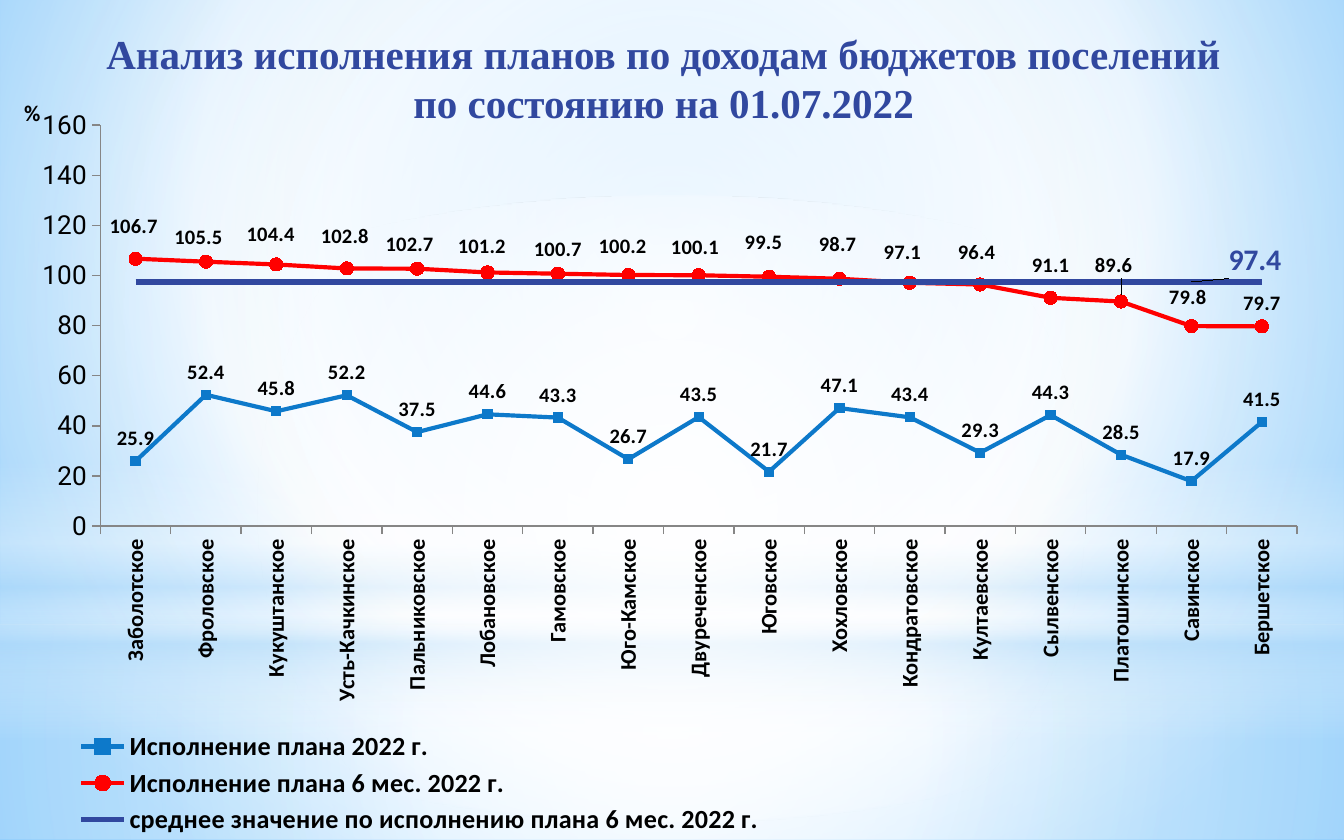
from pptx import Presentation
from pptx import util as u
from pptx.chart.data import CategoryChartData
from pptx.dml.color import RGBColor
from pptx.enum import chart as ch, shapes, text
from pptx.oxml import parse_xml
from pptx.oxml.ns import nsdecls, qn

Pt = u.Pt

# Content
TITLE = ["Анализ исполнения планов по доходам бюджетов поселений",
         "по состоянию на 01.07.2022"]
SETTLEMENTS = [
    "Заболотское", "Фроловское", "Кукуштанское", "Усть-Качкинское", "Пальниковское",
    "Лобановское", "Гамовское", "Юго-Камское", "Двуреченское", "Юговское", "Хохловское",
    "Кондратовское", "Култаевское", "Сылвенское", "Платошинское", "Савинское", "Бершетское"]
YEAR_PLAN = [25.9, 52.4, 45.8, 52.2, 37.5, 44.6, 43.3, 26.7, 43.5,
             21.7, 47.1, 43.4, 29.3, 44.3, 28.5, 17.9, 41.5]
HALF_PLAN = [106.7, 105.5, 104.4, 102.8, 102.7, 101.2, 100.7, 100.2, 100.1,
             99.5, 98.7, 97.1, 96.4, 91.1, 89.6, 79.8, 79.7]
SERIES = [
    ("Исполнение плана 2022 г.", YEAR_PLAN),
    ("Исполнение плана 6 мес. 2022 г.", HALF_PLAN),
    ("среднее значение по исполнению плана 6 мес. 2022 г.", [97.4] * len(SETTLEMENTS))]
# Shifts of the half-year labels from their usual place, in points (x, y)
HALF_SHIFTS = {
    0: (-1, -4), 1: (-4, 0), 2: (-3, -3), 3: (-1, -4), 4: (-4, 0), 5: (-3, -1),
    7: (-3, -2), 8: (-2, -2), 9: (-3, -5), 10: (-1, -5), 11: (-4, -3), 12: (-2, -4),
    13: (0, -4), 14: (-4, -6), 15: (-2, -2), 16: (0, 1)}
MEAN_POINT, MEAN_SHIFT = 15, (34, 1)

THEME = dict(
    year="0D79CA", half="FF0000", mean="31489F", title="31489F", ink="000000", axis="868686",
    title_font="Times New Roman", label_font="Calibri", chart_font="Roboto",
    title_size=22, legend_size=14, value_size=14, category_size=12, label_size=11, mean_size=16)

# Gradients: stops are (position, colour, opacity); a focus makes them radial
CENTRE = (50, 50, 50, 50)
BACKGROUND = ([(0, "9ED5FF", 100), (60, "FFFFFF", 100), (100, "5BB9FF", 100)], (20, 10, 20, 60))
RECT, OVAL = shapes.MSO_SHAPE.RECTANGLE, shapes.MSO_SHAPE.OVAL
GLOWS = [  # shape, top, height, stops, focus
    (RECT, 334.8, 115.2, [(0, "FFFFFF", 91), (37, "FFFFFF", 76), (100, "B4DCFA", 79)], CENTRE),
    (RECT, 0, 334.8, [(0, "FFFFFF", 89), (48, "FFFFFF", 62), (100, "B4DCFA", 79)], CENTRE),
    (RECT, 247, 149.8, [(0, "FFFFFF", 0), (29, "FFFFFF", 30), (45, "B4DCFA", 40),
                        (55, "FFFFFF", 26), (65, "B4DCFA", 60), (100, "FFFFFF", 0)], None),
    (OVAL, 105.1, 334.8, [(0, "FFFFFF", 100), (56, "FFFFFF", 0)], CENTRE)]

SLIDE_W, SLIDE_H = 720, 450
CHART_BOX = (2.9, 43.9, 717.1, 406.1)


def rgb(role):
    return RGBColor.from_string(THEME[role])


def style(font, size, color="ink", face="label_font", bold=True):
    font.size, font.bold, font.name = Pt(size), bold, THEME[face]
    font.color.rgb = rgb(color)


def set_gradient(fill, owner, stops, focus):
    fill.gradient()
    grad = next(owner.iter(qn("a:gradFill")))
    grad.clear()
    marks = "".join(
        f'<a:gs pos="{pos * 1000}"><a:srgbClr val="{color}">'
        f'<a:alpha val="{alpha * 1000}"/></a:srgbClr></a:gs>' for pos, color, alpha in stops)
    grad.append(parse_xml(f'<a:gsLst {nsdecls("a")}>{marks}</a:gsLst>'))
    if focus:
        edges = " ".join(f'{side}="{v * 1000}"' for side, v in zip("ltrb", focus))
        grad.append(parse_xml(f'<a:path {nsdecls("a")} path="circle">'
                              f'<a:fillToRect {edges}/></a:path>'))
    else:
        grad.append(parse_xml(f'<a:lin {nsdecls("a")} ang="5400000" scaled="0"/>'))


def layout(x, y, w=None, h=None, edge=False, inner=False):
    parts = [("layoutTarget", "inner")] if inner else []
    if edge:
        parts += [("xMode", "edge"), ("yMode", "edge")]
    parts += [("x", x), ("y", y)]
    if w is not None:
        parts += [("w", w), ("h", h)]
    body = "".join(f'<c:{tag} val="{value}"/>' for tag, value in parts)
    return parse_xml(f'<c:layout {nsdecls("c")}><c:manualLayout>{body}'
                     f'</c:manualLayout></c:layout>')


def place(element, new_layout, after=None):
    for old in element.findall(qn("c:layout")):
        element.remove(old)
    if after is None:
        element.insert(0, new_layout)
    else:
        element.find(qn(after)).addnext(new_layout)


def shift_label(series, index, shift, size, color):
    label = series.points[index].data_label
    style(label.font, size, color)
    label.position = ch.XL_LABEL_POSITION.ABOVE
    element = series._element.xpath(f'c:dLbls/c:dLbl[c:idx/@val="{index}"]')[0]
    place(element, layout(round(shift[0] / CHART_BOX[2], 4),
                          round(shift[1] / CHART_BOX[3], 4)), after="c:idx")


prs = Presentation()
prs.slide_width, prs.slide_height = Pt(SLIDE_W), Pt(SLIDE_H)
slide = prs.slides.add_slide(prs.slide_layouts[6])

# Background and glows
set_gradient(slide.background.fill, slide._element, *BACKGROUND)
for kind, top, height, stops, focus in GLOWS:
    glow = slide.shapes.add_shape(kind, 0, Pt(top), Pt(SLIDE_W), Pt(height))
    glow.shadow.inherit = False
    glow.line.fill.background()
    set_gradient(glow.fill, glow._element.spPr, stops, focus)

# Title
title = slide.shapes.add_textbox(Pt(14.4), Pt(9.4), Pt(692), Pt(64)).text_frame
title.word_wrap = True
title.margin_right = Pt(17)
title.vertical_anchor = text.MSO_ANCHOR.MIDDLE
heading = title.paragraphs[0]
heading.alignment = text.PP_ALIGN.CENTER
for number, line in enumerate(TITLE):
    if number:
        heading.add_line_break()
    run = heading.add_run()
    run.text = line
    style(run.font, THEME["title_size"], "title", "title_font")

# Chart
data = CategoryChartData(number_format="#,##0.0")
data.categories = SETTLEMENTS
for name, values in SERIES:
    data.add_series(name, values)
chart = slide.shapes.add_chart(ch.XL_CHART_TYPE.LINE_MARKERS, *map(Pt, CHART_BOX), data).chart
style(chart.font, 18, face="chart_font", bold=False)
chart.has_title = False
plot = chart.plots[0]
plot.vary_by_categories = False
place(chart._chartSpace.chart.plotArea, layout(0.071, 0.057, 0.894, 0.529, True, True))

# Axes
categories, percent = chart.category_axis, chart.value_axis
for axis in (categories, percent):
    axis.has_major_gridlines = False
    axis.major_tick_mark = ch.XL_TICK_MARK.OUTSIDE
    axis.format.line.color.rgb = rgb("axis")
    axis.format.line.width = Pt(0.75)
style(categories.tick_labels.font, THEME["category_size"])
categories._element.find(qn("c:txPr")).find(qn("a:bodyPr")).set("rot", "-5400000")
style(percent.tick_labels.font, THEME["value_size"], face="chart_font", bold=False)
percent.tick_labels.number_format = "#,##0"
percent.tick_labels.number_format_is_linked = False
percent.minimum_scale, percent.maximum_scale, percent.major_unit = 0, 160, 20
unit_frame = percent.axis_title.text_frame
unit = unit_frame.paragraphs[0].add_run()
unit.text = "%"
style(unit.font, THEME["category_size"])
unit_frame._txBody.find(qn("a:bodyPr")).set("rot", "0")
place(percent.axis_title._element, layout(0.011, 0.016, edge=True), after="c:tx")

# Lines, markers and labels
year, half, mean = plot.series
MARKS = ch.XL_MARKER_STYLE
for series, role, width, mark, size in (
        (year, "year", 2.25, MARKS.SQUARE, 5),
        (half, "half", 2.25, MARKS.CIRCLE, 7),
        (mean, "mean", 2.75, MARKS.NONE, 5)):
    series.smooth = False
    series.format.line.color.rgb = rgb(role)
    series.format.line.width = Pt(width)
    series.marker.style, series.marker.size = mark, size
    if mark != MARKS.NONE:
        series.marker.format.fill.solid()
        series.marker.format.fill.fore_color.rgb = rgb(role)
        series.marker.format.line.color.rgb = rgb(role)
    labels = series.data_labels
    labels.show_value = series is not mean
    labels.number_format, labels.number_format_is_linked = "#,##0.0", False
    labels.position = ch.XL_LABEL_POSITION.ABOVE
    style(labels.font, THEME["label_size"])
for index, shift in HALF_SHIFTS.items():
    shift_label(half, index, shift, THEME["label_size"], "ink")
shift_label(mean, MEAN_POINT, MEAN_SHIFT, THEME["mean_size"], "mean")

# Legend
chart.has_legend = True
legend = chart.legend
legend.position = ch.XL_LEGEND_POSITION.BOTTOM
legend.include_in_layout = False
style(legend.font, THEME["legend_size"])
place(legend._element, layout(0.05, 0.85, 0.52, 0.15, edge=True), after="c:legendPos")

prs.save("out.pptx")
